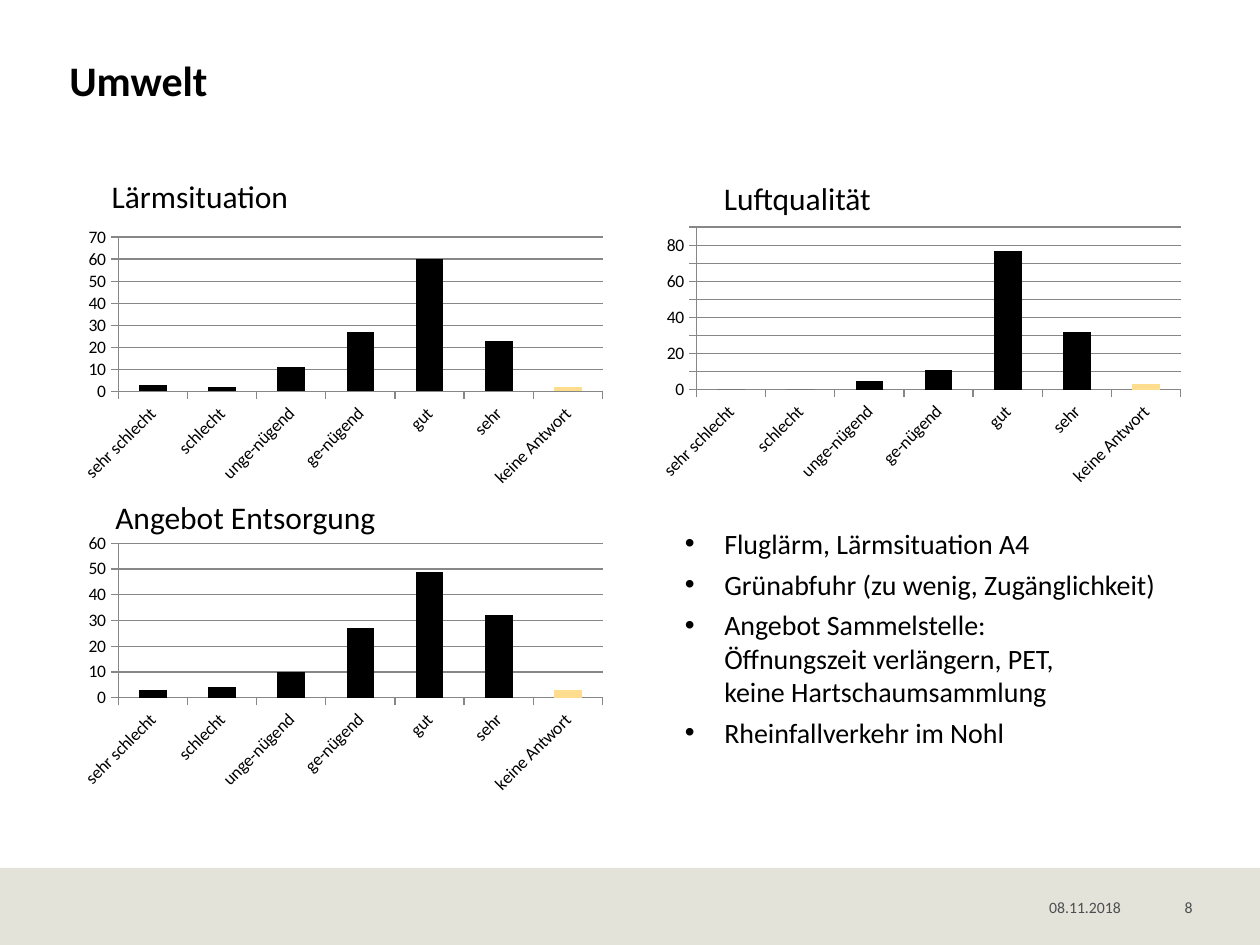
from lxml import etree
from pptx import Presentation, util as u
from pptx.chart import data as cd
from pptx.dml import color as dc
from pptx.enum import chart as ch, shapes, text
from pptx.oxml import ns, parse_xml

COLORS = {"black": "000000", "accent": "FFDD8F", "footer": "E4E3D9",
          "muted": "4C4F52", "grid": "878787"}
CATEGORIES = ["sehr schlecht", "schlecht", "unge-nügend", "ge-nügend",
              "gut", "sehr", "keine Antwort"]
LEFT, RIGHT = 39.6, 370
CHART_W, CHART_H = 311, 154.8


def rgb(name):
    return dc.RGBColor.from_string(COLORS[name])


class SlideBuilder:
    font = "Calibri"

    def __init__(self, prs):
        self.slide = prs.slides.add_slide(prs.slide_layouts[6])

    def bar(self, x, y, w, h, color):
        sp = self.slide.shapes.add_shape(
            shapes.MSO_SHAPE.RECTANGLE, u.Pt(x), u.Pt(y), u.Pt(w), u.Pt(h))
        sp.shadow.inherit = False
        sp.fill.solid()
        sp.fill.fore_color.rgb = rgb(color)
        sp.line.fill.background()

    def text(self, x, y, w, h, lines, size, color="black", bold=False,
             inset=True, wrap=True, bottom=False, right=False, bullets=False):
        sp = self.slide.shapes.add_textbox(u.Pt(x), u.Pt(y), u.Pt(w), u.Pt(h))
        tf = sp.text_frame
        tf.word_wrap = wrap
        if not inset:
            tf.margin_left = tf.margin_right = 0
            tf.margin_top = tf.margin_bottom = 0
        if bottom:
            tf.vertical_anchor = text.MSO_ANCHOR.BOTTOM
        for i, line in enumerate(lines):
            p = tf.paragraphs[0] if i == 0 else tf.add_paragraph()
            p.text = line
            if right:
                p.alignment = text.PP_ALIGN.RIGHT
            if bullets:
                self.bullet(p)
                if i:
                    p.space_before = u.Pt(4)
            for r in p.runs:
                r.font.name = self.font
                r.font.size = u.Pt(size)
                r.font.bold = bold
                r.font.color.rgb = rgb(color)

    def bullet(self, p):
        pPr = p._p.get_or_add_pPr()
        pPr.set("marL", str(u.Pt(22.5)))
        pPr.set("indent", str(-u.Pt(22.5)))
        etree.SubElement(pPr, ns.qn("a:buFont")).set("typeface", "Arial")
        etree.SubElement(pPr, ns.qn("a:buChar")).set("char", "•")

    def chart(self, x, y, values, top, plot_y, plot_h):
        data = cd.CategoryChartData()
        data.categories = CATEGORIES
        data.add_series("Series 1", values)
        chart = self.slide.shapes.add_chart(
            ch.XL_CHART_TYPE.COLUMN_CLUSTERED, u.Pt(x), u.Pt(y),
            u.Pt(CHART_W), u.Pt(CHART_H), data).chart
        chart.has_legend = chart.has_title = False
        chart.font.name = self.font
        chart.font.size = u.Pt(10)
        chart.font.color.rgb = rgb("black")
        plot = chart.plots[0]
        plot.gap_width = 150
        plot.vary_by_categories = False
        series = plot.series[0]
        for part, color in ((series, "black"),
                            (series.points[len(values) - 1], "accent")):
            part.format.fill.solid()
            part.format.fill.fore_color.rgb = rgb(color)
        val, cat = chart.value_axis, chart.category_axis
        val.minimum_scale, val.maximum_scale, val.major_unit = 0, top, 10
        val.has_major_gridlines = True
        for line in (val.format.line, cat.format.line,
                     val.major_gridlines.format.line):
            line.color.rgb = rgb("grid")
            line.width = u.Pt(0.75)
        for axis in (val, cat):
            axis.major_tick_mark = ch.XL_TICK_MARK.OUTSIDE
            axis.tick_labels.font.size = u.Pt(10)
        body = cat._element.find(ns.qn("c:txPr")).find(ns.qn("a:bodyPr"))
        body.set("rot", "-2700000")
        self.plot_layout(chart, 0.09, plot_y, 0.89, plot_h)

    def plot_layout(self, chart, x, y, w, h):
        area = chart._chartSpace.chart.plotArea
        for old in area.findall(ns.qn("c:layout")):
            area.remove(old)
        area.insert(0, parse_xml(
            f'<c:layout {ns.nsdecls("c")}><c:manualLayout>'
            '<c:layoutTarget val="inner"/>'
            '<c:xMode val="edge"/><c:yMode val="edge"/>'
            f'<c:x val="{x}"/><c:y val="{y}"/><c:w val="{w}"/><c:h val="{h}"/>'
            '</c:manualLayout></c:layout>'))


def main():
    prs = Presentation()
    prs.slide_width, prs.slide_height = u.Pt(720), u.Pt(540)
    s = SlideBuilder(prs)
    s.bar(0, 496, 720, 44, "footer")
    s.text(LEFT, 31, 641.5, 28.8, ["Umwelt"], 24, bold=True, inset=False)
    s.text(599.5, 499.3, 51, 24.5, ["08.11.2018"], 9, "muted",
           inset=False, bottom=True)
    s.text(650.5, 499.3, 31, 24.5, ["8"], 9, "muted",
           inset=False, bottom=True, right=True)
    for title, x, y, w in [("Lärmsituation", 56.7, 97.6, 116.6),
                           ("Luftqualität", 406.6, 99, 100),
                           ("Angebot Entsorgung", 58.8, 281.3, 165)]:
        s.text(x, y, w, 28.8, [title], 18, wrap=False)
    for x, y, values, top, plot_y, plot_h in [
            (LEFT, 126.2, [3, 2, 11, 27, 60, 23, 2], 70, 0.06, 0.57),
            (RIGHT, 126.7, [0, 0, 5, 11, 77, 32, 3], 90, 0.02, 0.6),
            (LEFT, 301.2, [3, 4, 10, 27, 49, 32, 3], 60, 0.06, 0.57)]:
        s.chart(x, y, values, top, plot_y, plot_h)
    s.text(384.3, 297.4, 315, 150, [
        "Fluglärm, Lärmsituation A4",
        "Grünabfuhr (zu wenig, Zugänglichkeit)",
        "Angebot Sammelstelle:\vÖffnungszeit verlängern, PET,\v"
        "keine Hartschaumsammlung",
        "Rheinfallverkehr im Nohl"], 16, bullets=True)
    prs.save("out.pptx")


if __name__ == "__main__":
    main()
